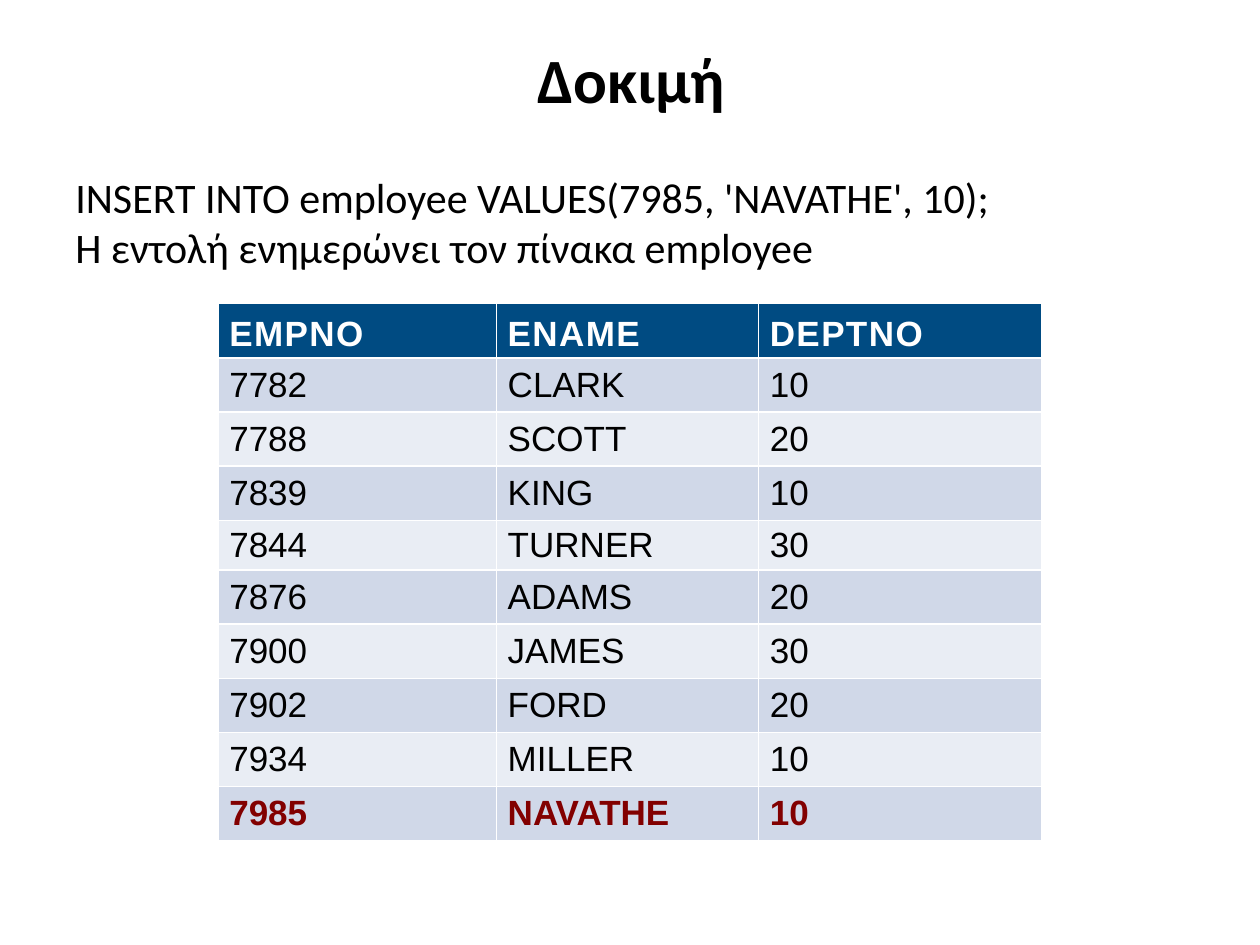
"""Build the slide that shows the employee table after an INSERT statement."""
import typing

import pptx
import pptx.dml.color
import pptx.enum.text
import pptx.util
from pptx.util import Inches

COLORS = {
    "black": "000000",
    "white": "FFFFFF",
    "header": "004B82",
    "odd_row": "D0D8E8",
    "even_row": "E9EDF4",
    "inserted": "820000",
}
ANCHOR = pptx.enum.text.MSO_ANCHOR


class Employee(typing.NamedTuple):
    empno: str
    ename: str
    deptno: str


class TextStyle(typing.NamedTuple):
    font: str
    size: int
    color: str
    bold: bool = False
    spacing: int = 0


HEADINGS = Employee("EMPNO", "ENAME", "DEPTNO")
EMPLOYEES = [
    Employee("7782", "CLARK", "10"),
    Employee("7788", "SCOTT", "20"),
    Employee("7839", "KING", "10"),
    Employee("7844", "TURNER", "30"),
    Employee("7876", "ADAMS", "20"),
    Employee("7900", "JAMES", "30"),
    Employee("7902", "FORD", "20"),
    Employee("7934", "MILLER", "10"),
]
INSERTED = Employee("7985", "NAVATHE", "10")
STATEMENT = (
    "INSERT INTO employee VALUES(7985, 'NAVATHE', 10);\n"
    "Η εντολή ενημερώνει τον πίνακα employee"
)

TITLE_STYLE = TextStyle("Calibri", 36, "black", bold=True)
STATEMENT_STYLE = TextStyle("Calibri", 24, "black")
HEADING_STYLE = TextStyle("Arial", 20, "white", bold=True, spacing=80)
EMPLOYEE_STYLE = TextStyle("Arial", 20, "black")
INSERTED_STYLE = TextStyle("Arial", 20, "inserted", bold=True)

COLUMN_WIDTHS = (2.21, 2.08, 2.25)
ROW_HEIGHT = 0.43
SHORT_ROW, SHORT_ROW_HEIGHT = 4, 0.38


def rgb(name: str) -> pptx.dml.color.RGBColor:
    return pptx.dml.color.RGBColor.from_string(COLORS[name])


def write(text_frame, text: str, style: TextStyle) -> None:
    paragraph = text_frame.paragraphs[0]
    paragraph.text = text
    for run in paragraph.runs:
        run.font.name = style.font
        run.font.size = pptx.util.Pt(style.size)
        run.font.bold = style.bold
        run.font.color.rgb = rgb(style.color)
        if style.spacing:
            run.font._element.set("spc", str(style.spacing))


def fill_row(table, index: int, employee: Employee, style: TextStyle,
             fill: str, anchor: ANCHOR) -> None:
    for column, value in enumerate(employee):
        cell = table.cell(index, column)
        cell.fill.solid()
        cell.fill.fore_color.rgb = rgb(fill)
        cell.vertical_anchor = anchor
        cell.margin_left = cell.margin_right = Inches(0.09)
        cell.margin_top = cell.margin_bottom = Inches(0.03)
        write(cell.text_frame, value, style)


def add_employee_table(slide) -> None:
    employees = EMPLOYEES + [INSERTED]
    table = slide.shapes.add_table(
        len(employees) + 1, len(HEADINGS), Inches(1.73), Inches(2.41),
        Inches(sum(COLUMN_WIDTHS)), Inches(4.26)).table
    for column, width in zip(table.columns, COLUMN_WIDTHS):
        column.width = Inches(width)
    for row in table.rows:
        row.height = Inches(ROW_HEIGHT)
    table.rows[SHORT_ROW].height = Inches(SHORT_ROW_HEIGHT)

    fill_row(table, 0, HEADINGS, HEADING_STYLE, "header", ANCHOR.BOTTOM)
    for index, employee in enumerate(employees, start=1):
        style = INSERTED_STYLE if employee == INSERTED else EMPLOYEE_STYLE
        fill = "odd_row" if index % 2 else "even_row"
        fill_row(table, index, employee, style, fill, ANCHOR.MIDDLE)


def main() -> None:
    presentation = pptx.Presentation()
    presentation.slide_width = Inches(10)
    presentation.slide_height = Inches(7.5)
    slide = presentation.slides.add_slide(presentation.slide_layouts[5])

    title = slide.shapes.title
    title.left, title.top = Inches(0.51), Inches(0.13)
    title.width, title.height = Inches(9), Inches(0.99)
    title.text_frame.vertical_anchor = ANCHOR.MIDDLE
    write(title.text_frame, "Δοκιμή", TITLE_STYLE)
    title.text_frame.paragraphs[0].alignment = pptx.enum.text.PP_ALIGN.CENTER

    statement = slide.shapes.add_textbox(
        Inches(0.5), Inches(1.31), Inches(9), Inches(5.51))
    statement.text_frame.word_wrap = True
    write(statement.text_frame, STATEMENT, STATEMENT_STYLE)

    add_employee_table(slide)
    presentation.save("out.pptx")


if __name__ == "__main__":
    main()
